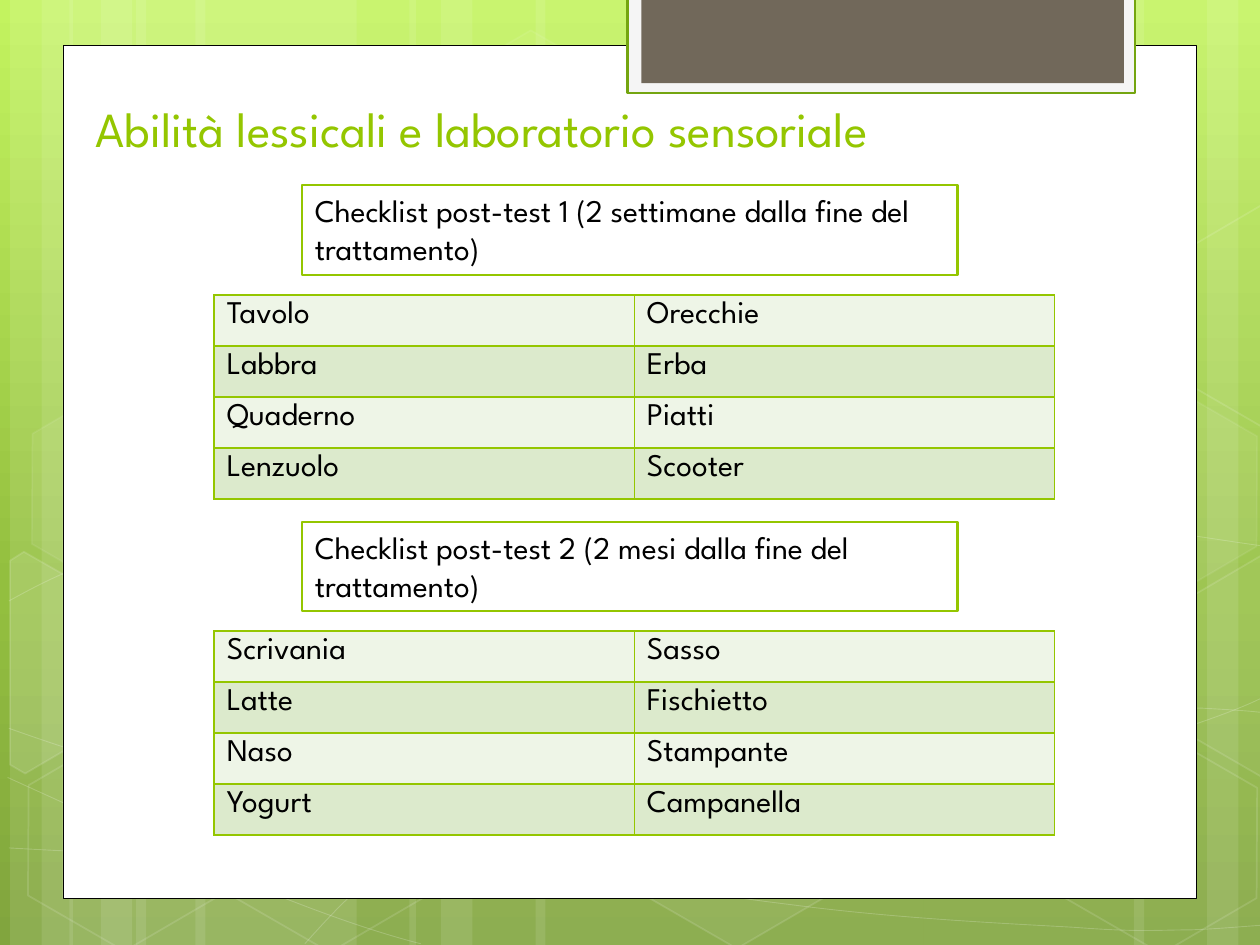
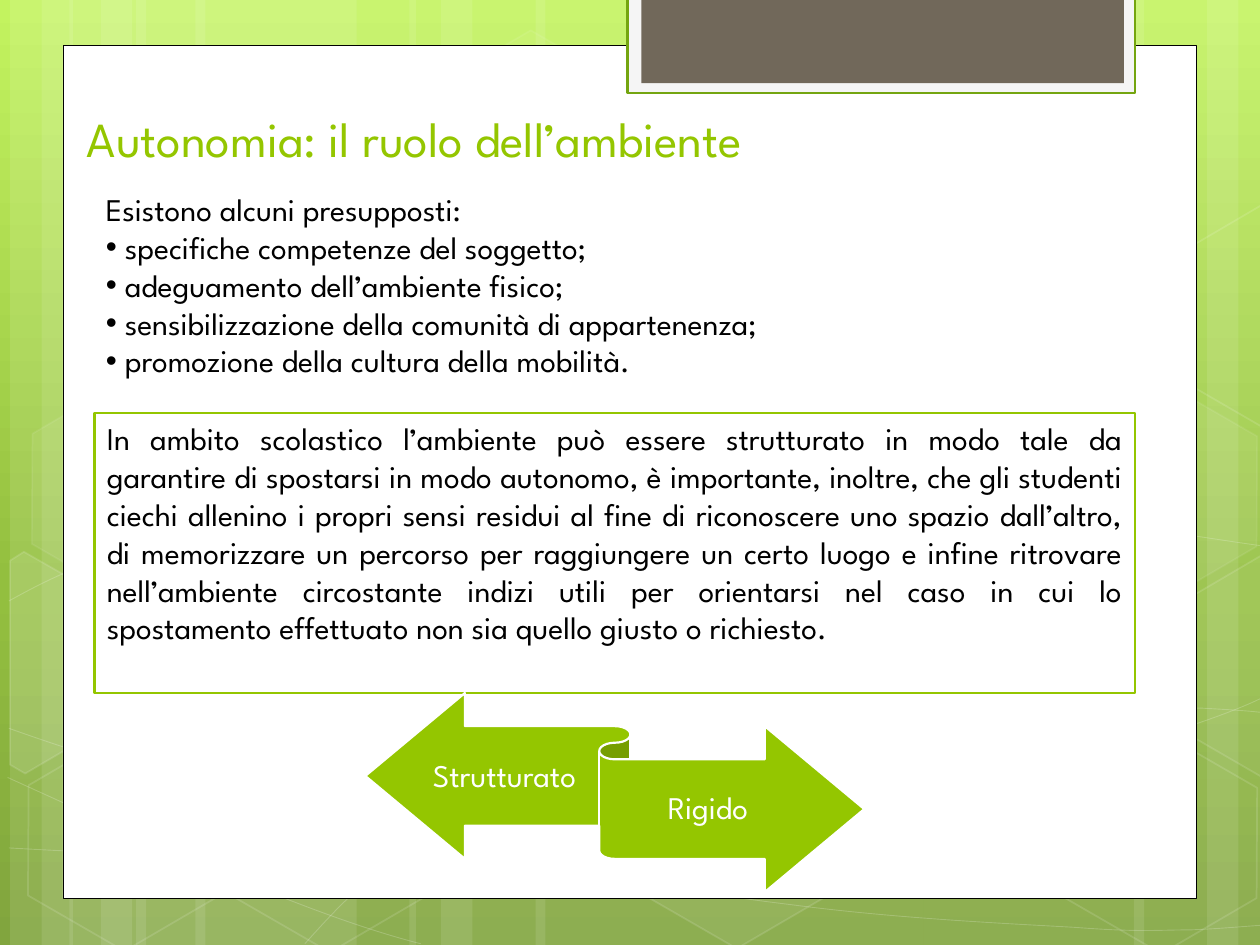
import copy
import pptx
import pptx.util
import pptx.dml.color
import pptx.enum.shapes
import pptx.enum.text
import pptx.oxml
import pptx.oxml.ns

Inches = pptx.util.Inches
Pt = pptx.util.Pt
KIND = pptx.enum.shapes.MSO_SHAPE
ALIGN = pptx.enum.text.PP_ALIGN
ANCHOR = pptx.enum.text.MSO_ANCHOR
qn = pptx.oxml.ns.qn

FONT = "League Spartan"
HUES = {
    "lime": "94C600", "white": "FFFFFF", "black": "000000",
    "edge": "74A510", "pale": "F5F5F5", "brown": "71685A",
    "odd": "EEF5E7", "even": "DCEACC",
    "top": "C3F35F", "mid": "93BF3F", "low": "81A53E",
}
STREAKS = [
    (1.08, 1.75), (0.08, 0.5), (0.33, 0.83), (1.55, 1.75), (0.55, 0.5), (0.8, 0.83),
    (7.33, 1.75), (9.58, 0.5), (9, 0.83), (4.25, 3.08), (3.25, 0.5), (3.5, 0.83),
]
CURVES = [
    [(0.07, 6.73), (0.61, 6.76), (1.15, 6.79), (1.9, 6.78), (2.65, 6.77), (3.58, 6.75),
     (4.58, 6.65), (5.58, 6.55), (7, 6.36), (7.92, 6.17), (8.83, 5.98), (9.77, 5.68),
     (10.07, 5.51)],
    [(0.07, 4.77), (0.36, 4.61), (0.65, 4.46), (1.21, 4.31), (1.78, 4.16), (2.59, 3.94),
     (3.47, 3.87), (4.36, 3.8), (5.44, 3.79), (6.54, 3.87), (7.64, 3.95), (9.47, 4.26),
     (10.07, 4.34)],
    [(0.06, 6.17), (1.27, 6.72), (2.47, 7.27), (3.34, 7.49)],
    [(0.07, 5.78), (0.38, 5.89), (0.7, 6), (1.28, 6.16), (1.86, 6.31), (2.73, 6.56),
     (3.57, 6.73), (4.4, 6.9), (5.45, 7.08), (6.28, 7.18), (7.11, 7.29), (8, 7.33),
     (8.53, 7.36), (9.05, 7.4), (9.19, 7.38), (9.45, 7.38), (9.71, 7.37), (9.89, 7.35),
     (10.07, 7.34)],
    [(2.42, 7.49), (2.6, 7.29), (2.78, 7.09), (3.02, 6.91), (3.26, 6.73), (3.6, 6.53),
     (3.88, 6.39), (4.16, 6.25), (4.33, 6.19), (4.7, 6.09), (5.06, 5.99), (5.73, 5.85),
     (6.08, 5.78), (6.44, 5.71), (6.49, 5.71), (6.8, 5.69), (7.11, 5.66), (7.6, 5.63),
     (7.94, 5.62), (8.29, 5.61), (8.86, 5.62), (8.86, 5.62), (9.08, 5.62), (9.31, 5.62),
     (9.53, 5.62), (9.71, 5.63), (9.88, 5.64), (9.97, 5.65), (10.06, 5.66), (10.03, 5.65),
     (10.06, 5.66)],
]
HEXES = [
    (3.34, 0.36, 4, 8), (4.97, 5.89, 6, 12), (0.11, 5.91, 0, 12), (0.14, 3.12, 7, 8),
    (1.74, 5.92, 0, 12), (7.53, 4.53, 10, 12), (8.34, 5.93, 0, 12), (8.34, 3.14, 7, 8),
]
CUTS = [
    ([(0.08, 4.45), (0.19, 4.38), (0.96, 4.82), (0.95, 5.7), (0.2, 6.14), (0.08, 6.07)], 10),
    ([(9.26, 4.85), (10.01, 4.41), (10.09, 4.46), (10.09, 6.13), (10.02, 6.17),
      (9.26, 5.73)], 4),
    ([(9.26, 2.07), (10.01, 1.63), (10.1, 1.68), (10.09, 3.35), (10.02, 3.39),
      (9.26, 2.95)], 0),
]


def rgb(hue):
    return pptx.dml.color.RGBColor.from_string(HUES[hue])


def tint(fill, hue, host, alpha):
    fill.solid()
    fill.fore_color.rgb = rgb(hue)
    if alpha < 100:
        color = host.find(qn("a:solidFill")).find(qn("a:srgbClr"))
        color.append(pptx.oxml.parse_xml(
            f'<a:alpha {pptx.oxml.ns.nsdecls("a")} val="{alpha * 1000}"/>'))


def paint(shape, fill=None, line=None, width=1.25, clear=100, faint=100):
    shape.shadow.inherit = False
    props = shape.element.spPr
    if fill and clear:
        tint(shape.fill, fill, props, clear)
    else:
        shape.fill.background()
    if line:
        shape.line.width = Pt(width)
        tint(shape.line.fill, line, props.find(qn("a:ln")), faint)
    else:
        shape.line.fill.background()
    return shape


def block(shapes, kind, box):
    return shapes.add_shape(kind, *map(Inches, box))


def trace(shapes, dots, close):
    spots = [(Inches(x), Inches(y)) for x, y in dots]
    pen = shapes.build_freeform(*spots[0])
    pen.add_line_segments(spots[1:], close=close)
    return pen.convert_to_shape()


def bend(shape):
    lines = list(shape.element.iter(qn("a:lnTo")))
    for i in range(0, len(lines), 3):
        curve = pptx.oxml.parse_xml(f'<a:cubicBezTo {pptx.oxml.ns.nsdecls("a")}/>')
        lines[i].addprevious(curve)
        for line in lines[i:i + 3]:
            curve.append(line[0])
            line.getparent().remove(line)
    return shape


def write(para, text, hue="black", size=18):
    run = para.add_run()
    run.text = text
    run.font.size = Pt(size)
    run.font.name = FONT
    run.font.color.rgb = rgb(hue)


def place(shape, box):
    shape.left, shape.top, shape.width, shape.height = map(Inches, box)


def sky(master):
    fill = master.background.fill
    fill.gradient()
    fill.gradient_angle = 270
    stops = master.element.find(".//" + qn("a:gsLst"))
    stops.append(copy.deepcopy(stops[0]))
    marks = [("top", 0), ("mid", 0.62), ("low", 1)]
    for stop, (hue, spot) in zip(fill.gradient_stops, marks):
        stop.color.rgb = rgb(hue)
        stop.position = spot


def scene(shapes):
    for x, wide in STREAKS:
        paint(block(shapes, KIND.RECTANGLE, (x, 0, wide, 7.5)), "white", clear=10)
    for dots in CURVES:
        paint(bend(trace(shapes, dots, False)), None, "white", 0.5, faint=20)
    for x, y, clear, faint in HEXES:
        cell = block(shapes, KIND.HEXAGON, (x, y, 1.75, 1.52))
        cell.adjustments[0] = 0.285
        cell.rotation = 30
        paint(cell, "white", "white", 1, clear, faint)
    for dots, clear in CUTS:
        paint(trace(shapes, dots, True), "white", "white", 1, clear, 12)


def frame(shapes):
    rect = KIND.RECTANGLE
    paint(block(shapes, rect, (0.5, 0.36, 9, 6.77)), "white", "black", 0.5)
    paint(block(shapes, rect, (4.98, -0.02, 4.03, 0.76)), "pale", "edge")
    paint(block(shapes, rect, (5.09, -0.02, 3.83, 0.68)), "brown")


def dress(master, slide):
    sky(master)
    group = slide.shapes.add_group_shape()
    scene(group.shapes)
    frame(group.shapes)
    tree = master.shapes.element
    tree.append(group.element)
    for n, node in enumerate(tree.iter(qn("p:cNvPr")), 1):
        node.set("id", str(n))


def title(slide, box, text):
    head = slide.shapes.title
    place(head, box)
    body = head.text_frame
    body.vertical_anchor = ANCHOR.BOTTOM
    para = body.paragraphs[0]
    para.alignment = ALIGN.LEFT
    write(para, text, "lime", 28)


def panel(slide, box, text, align=ALIGN.LEFT):
    card = paint(block(slide.shapes, KIND.RECTANGLE, box), "white", "lime")
    body = card.text_frame
    body.word_wrap = True
    body.vertical_anchor = ANCHOR.TOP
    para = body.paragraphs[0]
    para.alignment = align
    write(para, text)


def border(cell):
    props = cell._tc.get_or_add_tcPr()
    for side in "LRTB":
        props.append(pptx.oxml.parse_xml(
            f'<a:ln{side} {pptx.oxml.ns.nsdecls("a")} w="12700"><a:solidFill>'
            f'<a:srgbClr val="{HUES["lime"]}"/></a:solidFill></a:ln{side}>'))


def check(slide, box, head, rows):
    x, y, wide, high = box
    panel(slide, (x + 0.7, y, 5.2, 0.71), head)
    spot = map(Inches, (x, y + 0.87, wide, high - 0.87))
    grid = slide.shapes.add_table(len(rows), 2, *spot).table
    for r, words in enumerate(rows):
        for c, word in enumerate(words):
            cell = grid.cell(r, c)
            border(cell)
            cell.fill.solid()
            cell.fill.fore_color.rgb = rgb("even" if r % 2 else "odd")
            write(cell.text_frame.paragraphs[0], word)


def bullets(slide, box, lead, items):
    holder = slide.placeholders[1]
    place(holder, box)
    body = holder.text_frame
    body.auto_size = pptx.enum.text.MSO_AUTO_SIZE.NONE
    for n, text in enumerate([lead] + items):
        para = body.add_paragraph() if n else body.paragraphs[0]
        para.space_before = Pt(0)
        props = para._p.get_or_add_pPr()
        gap = Inches(0.15) if n else 0
        props.set("marL", str(gap))
        props.set("indent", str(-gap))
        mark = 'buChar char="•"' if n else "buNone"
        props.append(pptx.oxml.parse_xml(f'<a:{mark} {pptx.oxml.ns.nsdecls("a")}/>'))
        write(para, text)


def ribbon(slide, box, words):
    x, y = box[:2]
    paint(block(slide.shapes, KIND.LEFT_RIGHT_RIBBON, box), "lime", "white")
    spots = [(0.48, 0.28, 1.31), (1.98, 0.53, 1.54)]
    for word, (dx, dy, wide) in zip(words, spots):
        label = slide.shapes.add_textbox(*map(Inches, (x + dx, y + dy, wide, 0.78)))
        body = label.text_frame
        body.word_wrap = True
        body.vertical_anchor = ANCHOR.MIDDLE
        body.margin_left = body.margin_right = 0
        body.margin_top = body.margin_bottom = Inches(0.07)
        para = body.paragraphs[0]
        para.alignment = ALIGN.CENTER
        para.line_spacing = 0.9
        write(para, word, "white")


def words(slide):
    title(slide, (0.66, 0.52, 7.68, 0.78), "Abilità lessicali e laboratorio sensoriale")
    check(slide, (1.7, 1.47, 6.67, 2.49),
          "Checklist post-test 1 (2 settimane dalla fine del trattamento)",
          [("Tavolo", "Orecchie"), ("Labbra", "Erba"),
           ("Quaderno", "Piatti"), ("Lenzuolo", "Scooter")])
    check(slide, (1.7, 4.14, 6.67, 2.49),
          "Checklist post-test 2 (2 mesi dalla fine del trattamento)",
          [("Scrivania", "Sasso"), ("Latte", "Fischietto"),
           ("Naso", "Stampante"), ("Yogurt", "Campanella")])


def space(slide):
    title(slide, (0.59, 0.6, 8.58, 0.78), "Autonomia: il ruolo dell’ambiente")
    bullets(slide, (0.74, 1.46, 7.72, 1.62), "Esistono alcuni presupposti:", [
        "specifiche competenze del soggetto;",
        "adeguamento dell’ambiente fisico;",
        "sensibilizzazione della comunità di appartenenza;",
        "promozione della cultura della mobilità.",
    ])
    panel(slide, (0.75, 3.28, 8.26, 2.22),
          "In ambito scolastico l’ambiente può essere strutturato in modo tale da "
          "garantire di spostarsi in modo autonomo, è importante, inoltre, che gli "
          "studenti ciechi allenino i propri sensi residui al fine di riconoscere uno "
          "spazio dall’altro, di memorizzare un percorso per raggiungere un certo luogo "
          "e infine ritrovare nell’ambiente circostante indizi utili per orientarsi nel "
          "caso in cui lo spostamento effettuato non sia quello giusto o richiesto. ",
          ALIGN.JUSTIFY)
    ribbon(slide, (2.9, 5.5, 3.96, 1.58), ["Strutturato ", "Rigido "])


def main():
    deck = pptx.Presentation()
    deck.slide_width, deck.slide_height = Inches(10), Inches(7.5)
    first = deck.slides.add_slide(deck.slide_layouts[5])
    dress(deck.slide_master, first)
    words(first)
    space(deck.slides.add_slide(deck.slide_layouts[1]))
    deck.save("out.pptx")


if __name__ == "__main__":
    main()
